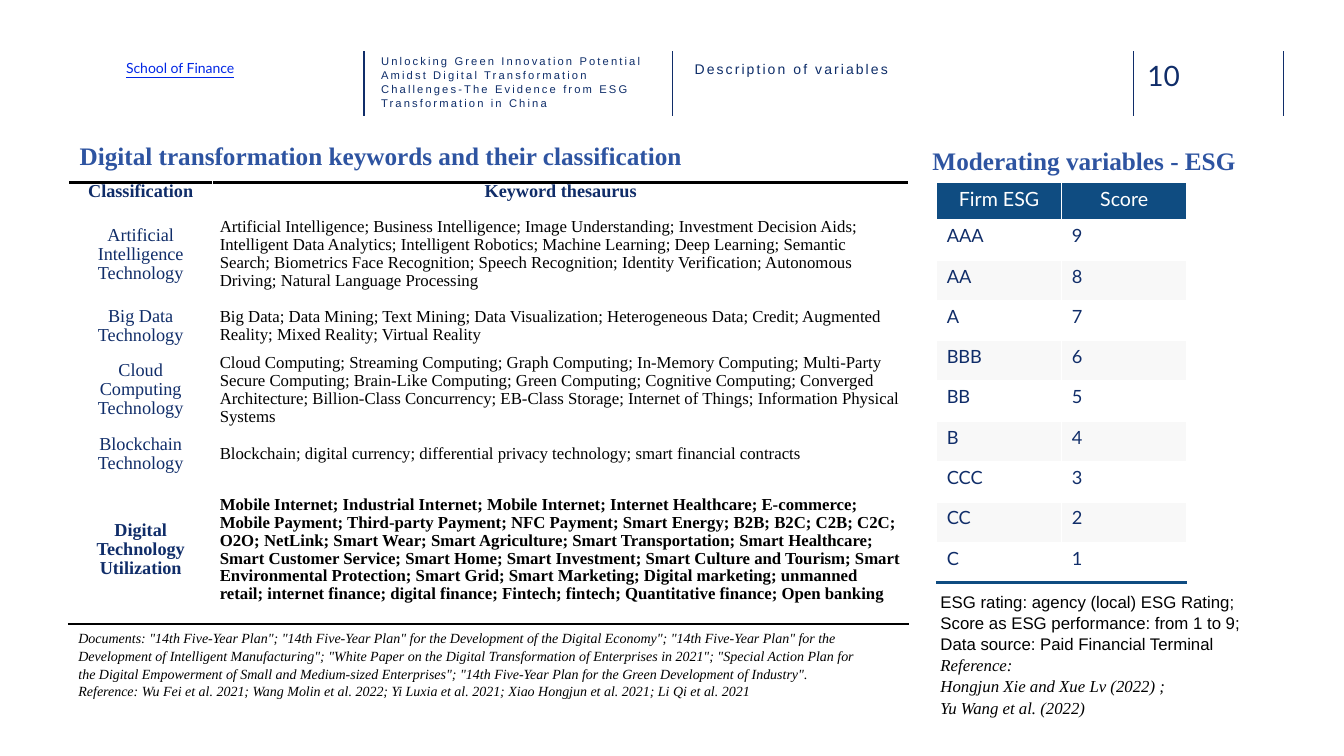
from dataclasses import dataclass

from lxml.etree import SubElement
from pptx import Presentation
from pptx.dml.color import RGBColor
from pptx.enum.shapes import MSO_CONNECTOR
from pptx.enum.text import MSO_ANCHOR, MSO_AUTO_SIZE, PP_ALIGN
from pptx.oxml.ns import qn
from pptx.util import Inches, Pt

COLOURS = {
    "navy": "102D69", "label": "0E2D69", "heading": "2E54A1", "link": "0026E5",
    "black": "000000", "white": "FFFFFF", "band": "F8F8F8", "header": "0F4C81",
}
SERIF, SANS, LATO = "Times New Roman", "Arial", "Lato"
TITLE_ONLY = 5


@dataclass(frozen=True)
class Style:
    font: str
    size: float
    colour: str
    bold: bool = False
    italic: bool = False
    underline: bool = False
    tracking: float = 0


@dataclass(frozen=True)
class Block:
    """A text box: its place, its paragraphs and its inner margins."""
    place: tuple[float, float, float, float]
    paragraphs: list[tuple[str, Style]]
    margins: tuple[float, float] = (0, 0)
    spacing: float = 1.05


@dataclass(frozen=True)
class Border:
    side: str
    colour: str
    width: float


HEADING = Style(SERIF, 18, "heading", bold=True)
RUNNING = Style(SANS, 8, "label", tracking=1.5)
SECTION = Style(SANS, 10, "label", tracking=1.5)
SCHOOL = Style(LATO, 10, "link", underline=True)
PAGE_NUMBER = Style(LATO, 20, "navy")
SOURCES = Style(SERIF, 10, "black", italic=True)
NOTE = Style(SANS, 12, "black")
CITATION = Style(SERIF, 12, "black", italic=True)
PADDED = (0.1, 0.05)

TITLE = Block((0.79, 1.38, 8.84, 0.44),
              [("Digital transformation keywords and their classification", HEADING)])
BLOCKS = [
    Block((11.38, 0.58, 0.73, 0.34), [("10", PAGE_NUMBER)], spacing=1),
    Block((1.25, 0.59, 2.08, 0.45), [("School of Finance", SCHOOL)], spacing=1),
    Block((3.78, 0.53, 2.88, 0.67),
          [("Unlocking Green Innovation Potential Amidst Digital Transformation "
            "Challenges-The Evidence from ESG Transformation in China", RUNNING)]),
    Block((6.89, 0.59, 2.26, 0.45), [("Description of variables", SECTION)]),
    Block((0.68, 6.19, 8.03, 0.76), [
        ('Documents: "14th Five-Year Plan"; "14th Five-Year Plan" for the Development of the '
         'Digital Economy"; "14th Five-Year Plan" for the Development of Intelligent '
         'Manufacturing"; "White Paper on the Digital Transformation of Enterprises in 2021"; '
         '"Special Action Plan for the Digital Empowerment of Small and Medium-sized '
         'Enterprises"; "14th Five-Year Plan for the Green Development of Industry".', SOURCES),
        ("Reference: Wu Fei et al. 2021; Wang Molin et al. 2022; Yi Luxia et al. 2021; "
         "Xiao Hongjun et al. 2021; Li Qi et al. 2021", SOURCES),
    ], PADDED),
    Block((9.15, 1.38, 3.38, 0.4), [("Moderating variables - ESG", HEADING)], PADDED),
    Block((9.23, 5.81, 3.5, 1.41), [
        ("ESG rating: agency (local) ESG Rating;", NOTE),
        ("Score as ESG performance: from 1 to 9;", NOTE),
        ("Data source: Paid Financial Terminal", NOTE),
        ("Reference:", CITATION),
        ("Hongjun Xie and Xue Lv (2022) ;", CITATION),
        ("Yu Wang et al. (2022)", CITATION),
    ], PADDED),
]

HEADER_RULES = [3.61, 6.67, 11.24, 12.73]
KEYWORD_ROW_HEIGHTS = [0.22, 0.99, 0.43, 0.84, 0.43, 1.47]
KEYWORDS = [
    ("Classification", "Keyword thesaurus"),
    ("Artificial Intelligence Technology",
     "Artificial Intelligence; Business Intelligence; Image Understanding; Investment Decision "
     "Aids; Intelligent Data Analytics; Intelligent Robotics; Machine Learning; Deep Learning; "
     "Semantic Search; Biometrics Face Recognition; Speech Recognition; Identity Verification; "
     "Autonomous Driving; Natural Language Processing"),
    ("Big Data Technology",
     "Big Data; Data Mining; Text Mining; Data Visualization; Heterogeneous Data; Credit; "
     "Augmented Reality; Mixed Reality; Virtual Reality"),
    ("Cloud Computing Technology",
     "Cloud Computing; Streaming Computing; Graph Computing; In-Memory Computing; Multi-Party "
     "Secure Computing; Brain-Like Computing; Green Computing; Cognitive Computing; Converged "
     "Architecture; Billion-Class Concurrency; EB-Class Storage; Internet of Things; "
     "Information Physical Systems"),
    ("Blockchain Technology",
     "Blockchain; digital currency; differential privacy technology; smart financial contracts"),
    ("Digital Technology Utilization",
     "Mobile Internet; Industrial Internet; Mobile Internet; Internet Healthcare; E-commerce; "
     "Mobile Payment; Third-party Payment; NFC Payment; Smart Energy; B2B; B2C; C2B; C2C; O2O; "
     "NetLink; Smart Wear; Smart Agriculture; Smart Transportation; Smart Healthcare; Smart "
     "Customer Service; Smart Home; Smart Investment; Smart Culture and Tourism; Smart "
     "Environmental Protection; Smart Grid; Smart Marketing; Digital marketing; unmanned "
     "retail; internet finance; digital finance; Fintech; fintech; Quantitative finance; "
     "Open banking"),
]
RATINGS = ["AAA", "AA", "A", "BBB", "BB", "B", "CCC", "CC", "C"]


def write(para, text: str, style: Style) -> None:
    span = para.add_run()
    span.text = text
    font = span.font
    font.name, font.size = style.font, Pt(style.size)
    font.bold, font.italic, font.underline = style.bold, style.italic, style.underline
    font.color.rgb = RGBColor.from_string(COLOURS[style.colour])
    if style.tracking:
        span._r.get_or_add_rPr().set("spc", str(int(style.tracking * 100)))


def fill_block(box, block: Block) -> None:
    frame = box.text_frame
    frame.word_wrap, frame.auto_size = True, MSO_AUTO_SIZE.NONE
    frame.vertical_anchor = MSO_ANCHOR.TOP
    across, down = block.margins
    frame.margin_left = frame.margin_right = Inches(across)
    frame.margin_top = frame.margin_bottom = Inches(down)
    for index, (text, style) in enumerate(block.paragraphs):
        para = frame.add_paragraph() if index else frame.paragraphs[0]
        para.alignment, para.line_spacing = PP_ALIGN.LEFT, block.spacing
        write(para, text, style)


def add_header_rule(page, x: float) -> None:
    rule = page.shapes.add_connector(
        MSO_CONNECTOR.STRAIGHT, Inches(x), Inches(0.51), Inches(x), Inches(1.15))
    rule.line.color.rgb = RGBColor.from_string(COLOURS["navy"])
    rule.line.width = Pt(1)
    SubElement(rule._element.spPr, qn("a:effectLst"))


def add_plain_table(page, left: float, top: float, widths: list[float], heights: list[float]):
    table = page.shapes.add_table(
        len(heights), len(widths), Inches(left), Inches(top),
        Inches(sum(widths)), Inches(sum(heights))).table
    table.first_row = table.horz_banding = False
    for column, width in zip(table.columns, widths):
        column.width = Inches(width)
    for row, height in zip(table.rows, heights):
        row.height = Inches(height)
    return table


def fill_cell(cell, text: str, style: Style, fill: str, centred: bool,
              borders: list[Border], spacing: float = 1) -> None:
    """Borders go in before the fill, as the schema orders them: L, R, T, B."""
    properties = cell._tc.get_or_add_tcPr()
    for border in borders:
        line = SubElement(properties, qn(f"a:ln{border.side}"), w=str(Pt(border.width)))
        SubElement(SubElement(line, qn("a:solidFill")), qn("a:srgbClr"),
                   val=COLOURS[border.colour])
    cell.fill.solid()
    cell.fill.fore_color.rgb = RGBColor.from_string(COLOURS[fill])
    para = cell.text_frame.paragraphs[0]
    para.alignment = PP_ALIGN.CENTER if centred else PP_ALIGN.LEFT
    para.line_spacing = spacing
    write(para, text, style)


def add_keyword_table(page) -> None:
    table = add_plain_table(page, 0.68, 1.81, [1.43, 6.9], KEYWORD_ROW_HEIGHTS)
    last = len(KEYWORDS) - 1
    edges = {0: [Border("T", "black", 2)], last: [Border("B", "black", 2)]}
    for row, texts in enumerate(KEYWORDS):
        bold = row in edges
        for column, text in enumerate(texts):
            cell = table.cell(row, column)
            cell.margin_left = cell.margin_right = Inches(0.07)
            cell.margin_top = cell.margin_bottom = 0
            cell.vertical_anchor = MSO_ANCHOR.MIDDLE if row else MSO_ANCHOR.TOP
            label = row == 0 or column == 0
            style = Style(SERIF, 13, "navy", bold) if label else Style(SERIF, 12, "black", bold)
            fill_cell(cell, text, style, "white", label, edges.get(row, []), 0.96)


def add_rating_table(page) -> None:
    scores = [(rating, str(len(RATINGS) - i)) for i, rating in enumerate(RATINGS)]
    rows = [("Firm ESG", "Score")] + scores
    table = add_plain_table(page, 9.29, 1.81, [1.24, 1.24], [0.37] + [0.4] * len(RATINGS))
    for row, texts in enumerate(rows):
        style = Style(LATO, 13, "navy") if row else Style(LATO, 14, "white")
        fill = ("band" if row % 2 == 0 else "white") if row else "header"
        for column, text in enumerate(texts):
            borders = [Border("L" if column else "R", "white", 1)]
            if row == len(RATINGS):
                borders.append(Border("B", "header", 3))
            fill_cell(table.cell(row, column), text, style, fill, row == 0, borders)


def main() -> None:
    deck = Presentation()
    deck.slide_width, deck.slide_height = Inches(13.33), Inches(7.5)
    page = deck.slides.add_slide(deck.slide_layouts[TITLE_ONLY])
    title = page.shapes.title
    title.left, title.top, title.width, title.height = map(Inches, TITLE.place)
    fill_block(title, TITLE)
    for x in HEADER_RULES:
        add_header_rule(page, x)
    add_keyword_table(page)
    add_rating_table(page)
    for block in BLOCKS:
        fill_block(page.shapes.add_textbox(*map(Inches, block.place)), block)
    deck.save("out.pptx")


if __name__ == "__main__":
    main()
